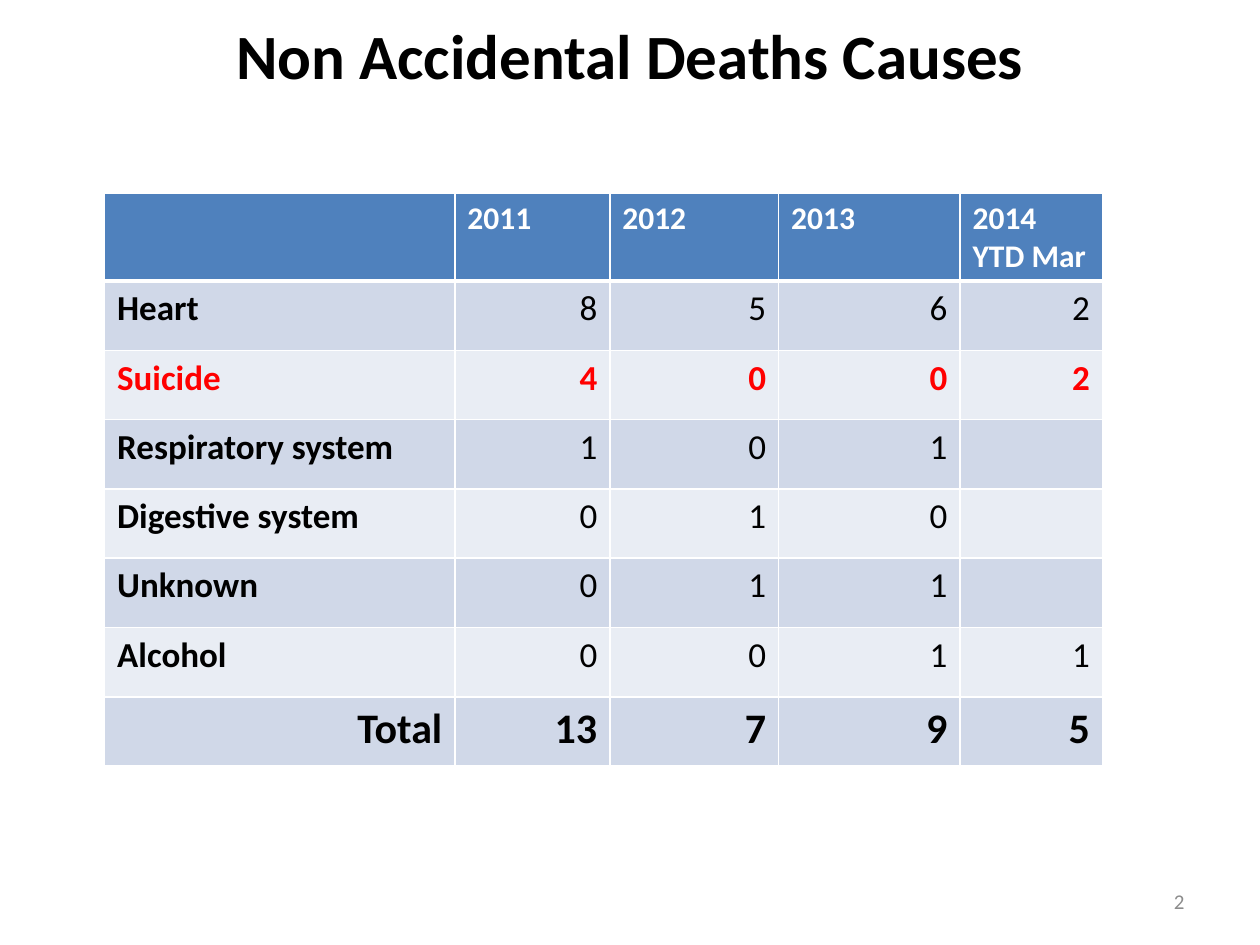
from lxml.etree import SubElement
from pptx import Presentation
from pptx.dml.color import RGBColor
from pptx.enum.text import MSO_ANCHOR as Anchor, PP_ALIGN as Align
from pptx.oxml.ns import qn
from pptx.util import Inches, Pt

WHITE, BLACK, RED, GREY = "FFFFFF", "000000", "FF0000", "8C8C8C"
HEADER_FILL, BAND_FILLS = "4F81BD", ("D0D8E8", "E9EDF4")

COLUMN_WIDTHS = (2.78, 1.23, 1.34, 1.44, 1.13)
HEADER_HEIGHT, ROW_HEIGHT = 0.7, 0.55
DEATHS = [
    ("", "2011", "2012", "2013", "2014 YTD Mar"),
    ("Heart", "8", "5", "6", "2"),
    ("Suicide", "4", "0", "0", "2"),
    ("Respiratory system", "1", "0", "1", ""),
    ("Digestive system", "0", "1", "0", ""),
    ("Unknown", "0", "1", "1", ""),
    ("Alcohol", "0", "0", "1", "1"),
    ("Total", "13", "7", "9", "5"),
]


def rgb(hex_color):
    return RGBColor.from_string(hex_color)


class SlideBuilder:
    font_name = "Calibri"

    def __init__(self, slide):
        self.slide = slide

    def set_text(self, frame, text, size, color, bold=False, align=Align.LEFT):
        frame.text = text
        paragraph = frame.paragraphs[0]
        paragraph.alignment = align
        font = paragraph.font
        if paragraph.runs:
            font = paragraph.runs[0].font
        font.name, font.size, font.bold = self.font_name, Pt(size), bold
        font.color.rgb = rgb(color)

    def text(self, left, top, width, height, text, size, color, **style):
        box = self.slide.shapes.add_textbox(
            Inches(left), Inches(top), Inches(width), Inches(height))
        frame = box.text_frame
        frame.word_wrap = True
        frame.vertical_anchor = Anchor.MIDDLE
        self.set_text(frame, text, size, color, **style)

    def borders(self, cell, top, bottom):
        """Draw white cell borders; top and bottom are widths in points."""
        properties = cell._tc.get_or_add_tcPr()
        for side, width in (("L", 1), ("R", 1), ("T", top), ("B", bottom)):
            line = SubElement(properties, qn(f"a:ln{side}"), w=str(Pt(width)))
            fill = SubElement(line, qn("a:solidFill"))
            SubElement(fill, qn("a:srgbClr"), val=WHITE)

    def table(self, left, top, rows):
        height = HEADER_HEIGHT + ROW_HEIGHT * (len(rows) - 1)
        table = self.slide.shapes.add_table(
            len(rows), len(COLUMN_WIDTHS), Inches(left), Inches(top),
            Inches(sum(COLUMN_WIDTHS)), Inches(height)).table
        for column, width in zip(table.columns, COLUMN_WIDTHS):
            column.width = Inches(width)
        for r, values in enumerate(rows):
            is_header, is_total = r == 0, values[0] == "Total"
            is_suicide = values[0] == "Suicide"
            table.rows[r].height = Inches(HEADER_HEIGHT if is_header else ROW_HEIGHT)
            size = 18 if is_header else 24 if is_total else 20
            color = WHITE if is_header else RED if is_suicide else BLACK
            fill = HEADER_FILL if is_header else BAND_FILLS[(r - 1) % 2]
            for c, value in enumerate(values):
                cell = table.cell(r, c)
                self.borders(cell, top=3 if r == 1 else 1, bottom=3 if is_header else 1)
                cell.fill.solid()
                cell.fill.fore_color.rgb = rgb(fill)
                is_number = not is_header and c > 0
                self.set_text(cell.text_frame, value, size, color,
                              bold=not is_number or is_suicide or is_total,
                              align=Align.RIGHT if is_number or is_total else Align.LEFT)


def main():
    deck = Presentation()
    deck.slide_width, deck.slide_height = Inches(10), Inches(7.5)
    builder = SlideBuilder(deck.slides.add_slide(deck.slide_layouts[6]))
    builder.text(0.5, 0, 9, 0.87, "Non Accidental Deaths Causes", 36, BLACK,
                 bold=True, align=Align.CENTER)
    builder.table(0.83, 1.53, DEATHS)
    builder.text(7.17, 6.95, 2.33, 0.4, "2", 12, GREY, align=Align.RIGHT)
    deck.save("out.pptx")


if __name__ == "__main__":
    main()
